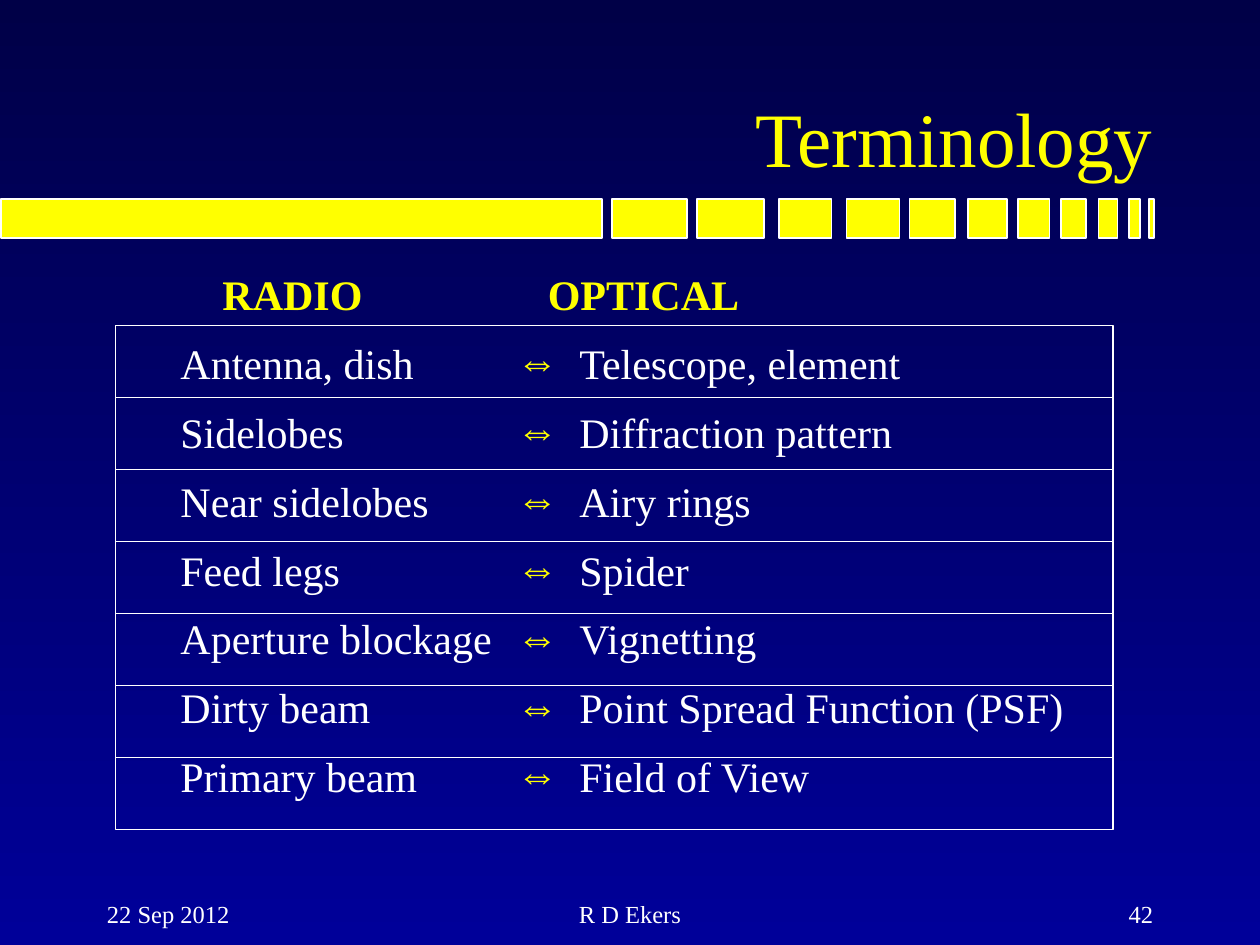
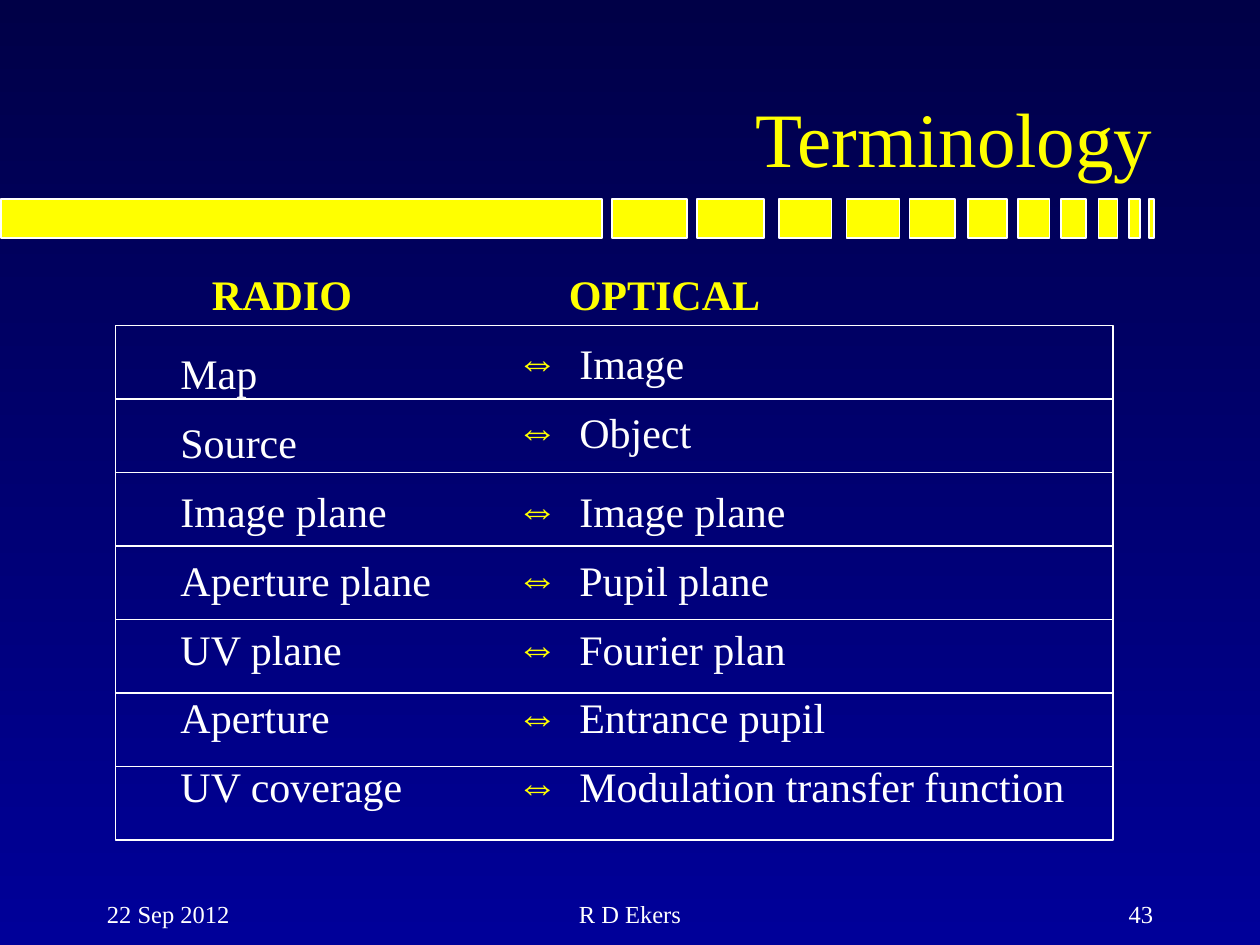
from lxml import etree
from pptx import Presentation
from pptx.dml.color import RGBColor
from pptx.enum.shapes import MSO_SHAPE
from pptx.enum.text import MSO_ANCHOR, MSO_AUTO_SIZE, PP_ALIGN
from pptx.oxml.ns import qn
from pptx.util import Pt

COLORS = {"top": "000047", "bottom": "000099", "accent": "FFFF00", "text": "FFFFFF"}
FONT = "Times New Roman"
TITLE = "Terminology"
DATE, AUTHOR = "22 Sep 2012", "R D Ekers"

# indents: left offsets of the two headings
# loose: (row, column) of the terms with wider line spacing
PAGES = [
    {
        "number": 42, "indents": (60, 54), "grid_height": 288, "loose": [],
        "terms": [
            ("Antenna, dish", "Telescope, element"),
            ("Sidelobes", "Diffraction pattern"),
            ("Near sidelobes", "Airy rings"),
            ("Feed legs", "Spider"),
            ("Aperture blockage", "Vignetting"),
            ("Dirty beam", "Point Spread Function (PSF)"),
            ("Primary beam", "Field of View"),
        ],
    },
    {
        "number": 43, "indents": (54, 66), "grid_height": 294, "loose": [(0, 0), (2, 1)],
        "terms": [
            ("Map", "Image"),
            ("Source", "Object"),
            ("Image plane", "Image plane"),
            ("Aperture plane", "Pupil plane"),
            ("UV plane", "Fourier plan"),
            ("Aperture", "Entrance pupil"),
            ("UV coverage", "Modulation transfer function"),
        ],
    },
]

# heading, box left, box width, term indent, hanging bullet
COLUMNS = [
    ("RADIO", 60, 270, 36, None),
    ("OPTICAL", 252, 366, 72, "⇔"),
]
BULLET_HANG = 36
TERM_GAP = 4.8

# left, width
BAND_BLOCKS = [
    (0.7, 343.4), (349.9, 42.5), (398.2, 38.2), (445, 30.2), (483.8, 30.2), (519.8, 25.9),
    (553, 22.3), (581.8, 18), (606.2, 14.4), (627.8, 10.8), (645.1, 6.5), (656.6, 3),
]
BAND_TOP, BAND_HEIGHT = 113.8, 22.3
GRID_LEFT, GRID_TOP, GRID_WIDTH = 66, 186, 570


def color(name):
    return RGBColor.from_string(COLORS[name])


def write(para, text, size=24, ink="text", bold=False, align=PP_ALIGN.LEFT):
    para.alignment = align
    span = para.add_run()
    span.text = text
    font = span.font
    font.name, font.size, font.bold = FONT, Pt(size), bold
    font.color.rgb = color(ink)


def indent(para, left, bullet=None):
    """Set the left margin, with an optional hanging bullet."""
    props = para._p.get_or_add_pPr()
    props.set("marL", str(Pt(left)))
    props.set("indent", str(-Pt(BULLET_HANG) if bullet else 0))
    if bullet:
        bullet_color = etree.SubElement(props, qn("a:buClr"))
        etree.SubElement(bullet_color, qn("a:srgbClr"), val=COLORS["accent"])
        etree.SubElement(props, qn("a:buFont"), typeface=FONT)
        etree.SubElement(props, qn("a:buChar"), char=bullet)


def add_text_frame(page, left, top, width, height):
    box = page.shapes.add_textbox(Pt(left), Pt(top), Pt(width), Pt(height))
    box.text_frame.word_wrap = True
    return box.text_frame


def add_rectangle(page, left, top, width, height, fill=None):
    box = page.shapes.add_shape(MSO_SHAPE.RECTANGLE, Pt(left), Pt(top), Pt(width), Pt(height))
    box.shadow.inherit = False
    box.line.color.rgb = color("text")
    box.line.width = Pt(1)
    if fill:
        box.fill.solid()
        box.fill.fore_color.rgb = color(fill)
    else:
        box.fill.background()


def set_background(master):
    fill = master.background.fill
    fill.gradient()
    fill.gradient_angle = 270
    for stop, name, position in zip(fill.gradient_stops, ("top", "bottom"), (0, 1)):
        stop.color.rgb = color(name)
        stop.position = position


def add_frame(page, number):
    """Add the title, band and footers that every page shares."""
    for left, width in BAND_BLOCKS:
        add_rectangle(page, left, BAND_TOP, width, BAND_HEIGHT, fill="accent")

    footers = [
        (DATE, 54, 150, PP_ALIGN.LEFT),
        (AUTHOR, 246, 228, PP_ALIGN.CENTER),
        (str(number), 516, 150, PP_ALIGN.RIGHT),
    ]
    for text, left, width, align in footers:
        frame = add_text_frame(page, left, 510, width, 36)
        write(frame.paragraphs[0], text, size=14, align=align)

    title = page.shapes.title
    title.left, title.top, title.width, title.height = Pt(54), Pt(15), Pt(612), Pt(93)
    frame = title.text_frame
    frame.auto_size = MSO_AUTO_SIZE.NONE
    frame.vertical_anchor = MSO_ANCHOR.BOTTOM
    write(frame.paragraphs[0], TITLE, size=44, ink="accent", align=PP_ALIGN.RIGHT)


def add_terms(page, content):
    for column, (heading, left, width, term_indent, bullet) in enumerate(COLUMNS):
        frame = add_text_frame(page, left, 150, width, 324)
        para = frame.paragraphs[0]
        write(para, heading, ink="accent", bold=True)
        indent(para, content["indents"][column])
        for row, pair in enumerate(content["terms"]):
            para = frame.add_paragraph()
            para.line_spacing = 1.4 if (row, column) in content["loose"] else 1.2
            para.space_before = Pt(TERM_GAP)
            write(para, pair[column])
            indent(para, term_indent, bullet)


def add_grid(page, content):
    row_height = content["grid_height"] / len(content["terms"])
    for row in range(len(content["terms"])):
        add_rectangle(page, GRID_LEFT, GRID_TOP + row * row_height, GRID_WIDTH, row_height)


def main():
    deck = Presentation()
    deck.slide_width, deck.slide_height = Pt(720), Pt(540)
    set_background(deck.slide_master)
    title_only = deck.slide_layouts[5]
    for content in PAGES:
        page = deck.slides.add_slide(title_only)
        add_frame(page, content["number"])
        add_terms(page, content)
        add_grid(page, content)
    deck.save("out.pptx")


if __name__ == "__main__":
    main()
